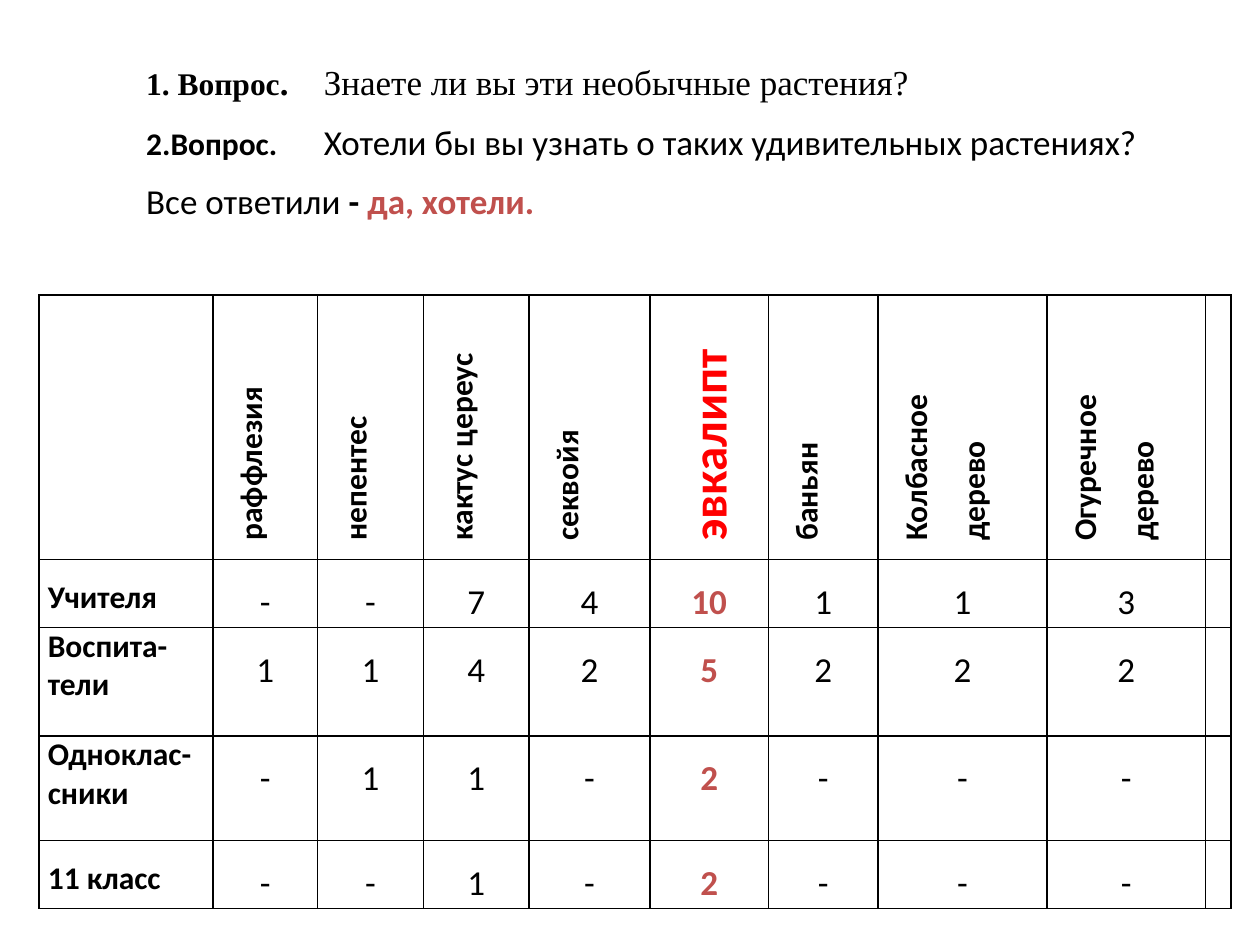
from dataclasses import dataclass
from lxml.etree import SubElement
from pptx import Presentation
from pptx.dml.color import RGBColor
from pptx.enum.text import MSO_ANCHOR, MSO_AUTO_SIZE, PP_ALIGN
from pptx.oxml import parse_xml
from pptx.oxml.ns import nsdecls, qn
from pptx.util import Inches, Pt


@dataclass(frozen=True)
class Theme:
    sans: str = "Calibri"
    serif: str = "Times New Roman"
    ink: str = "000000"
    accent: str = "C0504D"
    alert: str = "FF0000"
    label: int = 18
    text: int = 20
    big: int = 28
    border: int = 1


T = Theme()
COLS = [1.38, 0.83, 0.84, 0.84, 0.96, 0.94, 0.87, 1.34, 1.26, 0.2]
ROWS = [2.1, 0.54, 0.86, 0.83, 0.54]
PLANTS = [["раффлезия"], ["непентес"], ["кактус цереус"], ["секвойя"], ["эвкалипт"],
          ["баньян"], ["Колбасное ", "дерево"], ["Огуречное дерево"]]
ANSWERS = [
    (["Учителя"], "- - 7 4 10 1 1 3"),
    (["Воспита-", "тели"], "1 1 4 2 5 2 2 2"),
    (["Одноклас-", "сники"], "- 1 1 - 2 - - -"),
    (["11 класс"], "- - 1 - 2 - - -"),
]
WINNER = PLANTS.index(["эвкалипт"])


def share(prs, left, top, width, height):
    w, h = prs.slide_width / 100, prs.slide_height / 100
    return int(left * w), int(top * h), int(width * w), int(height * h)


def add_run(p, text, size=T.text, bold=False, color=T.ink, font=T.sans):
    r = p.add_run()
    r.text = text
    r.font.size, r.font.bold, r.font.name = Pt(size), bold, font
    r.font.color.rgb = RGBColor.from_string(color)


def add_questions(s, box):
    sp = s.placeholders[1]
    sp.left, sp.top, sp.width, sp.height = box
    tf = sp.text_frame
    tf.word_wrap, tf.auto_size = True, MSO_AUTO_SIZE.NONE
    tf.vertical_anchor = MSO_ANCHOR.TOP
    tf.margin_top = Inches(0.07)
    bold = {"bold": True}
    serif = {"font": T.serif}
    lines = [
        (2.49, [("1. Вопрос", {"size": T.label, **bold, **serif}), (".\t", {**bold, **serif}),
                ("Знаете ли вы эти необычные растения?", serif)]),
        (2.03, [("2.Вопрос.\t", {"size": T.label, **bold}),
                ("Хотели бы вы узнать о таких удивительных растениях?", {})]),
        (None, [("Все ответили ", {}), ("- ", bold),
                ("да, хотели.", {"color": T.accent, **bold})]),
    ]
    for i, (tab, runs) in enumerate(lines):
        p = tf.paragraphs[0] if i == 0 else tf.add_paragraph()
        p.space_before = Pt(10 if i else 0)
        pPr = p._p.get_or_add_pPr()
        pPr.set("marL", "0")
        pPr.set("indent", str(Inches(0.59)))
        SubElement(pPr, qn("a:buNone"))
        if tab:
            tabs = SubElement(pPr, qn("a:tabLst"))
            SubElement(tabs, qn("a:tab"), pos=str(Inches(tab)), algn="l")
        for text, style in runs:
            add_run(p, text, **style)


def format_cell(cell):
    cell.fill.background()
    cell.margin_left = cell.margin_right = Inches(0.07)
    cell.margin_top = cell.margin_bottom = 0
    tcPr = cell._tc.get_or_add_tcPr()
    for i, side in enumerate("LRTB"):
        tcPr.insert(i, parse_xml(
            f'<a:ln{side} {nsdecls("a")} w="{Pt(T.border)}"><a:solidFill>'
            f'<a:srgbClr val="{T.ink}"/></a:solidFill></a:ln{side}>'))


def fill_cell(cell, lines, align, spacing=1.5, indent=0, **style):
    tf = cell.text_frame
    for i, text in enumerate(lines):
        p = tf.paragraphs[0] if i == 0 else tf.add_paragraph()
        p.alignment, p.line_spacing = align, spacing
        p._p.get_or_add_pPr().set("marL", str(Inches(indent)))
        add_run(p, text, **style)


def add_survey(s, box):
    left, top, width, height = box
    tbl = s.shapes.add_table(len(ROWS), len(COLS), left, top, width, height).table
    tbl.first_row = tbl.horz_banding = False
    for col, w in zip(tbl.columns, COLS):
        col.width = int(width * w / sum(COLS))
    for row, h in zip(tbl.rows, ROWS):
        row.height = int(height * h / sum(ROWS))
    for cell in tbl.iter_cells():
        format_cell(cell)
    for c, lines in enumerate(PLANTS):
        cell = tbl.cell(0, c + 1)
        cell._tc.get_or_add_tcPr().set("vert", "vert270")
        size, color = (T.big, T.alert) if c == WINNER else (T.label, T.ink)
        fill_cell(cell, lines, PP_ALIGN.JUSTIFY, indent=0.08,
                  size=size, color=color, bold=True)
    for r, (label, values) in enumerate(ANSWERS, 1):
        fill_cell(tbl.cell(r, 0), label, PP_ALIGN.JUSTIFY,
                  spacing=1.5 if len(label) == 1 else 1.0, size=T.label, bold=True)
        for c, value in enumerate(values.split()):
            best = c == WINNER
            fill_cell(tbl.cell(r, c + 1), [value], PP_ALIGN.CENTER,
                      bold=best, color=T.accent if best else T.ink)


def main():
    prs = Presentation()
    prs.slide_width, prs.slide_height = Inches(10), Inches(7.5)
    s = prs.slides.add_slide(prs.slide_layouts[1])
    title = s.shapes.title._element
    title.getparent().remove(title)
    add_survey(s, share(prs, 3.1, 31.2, 94.6, 64.93))
    add_questions(s, share(prs, 4.7, 5.47, 88.3, 22.67))
    prs.save("out.pptx")


if __name__ == "__main__":
    main()
